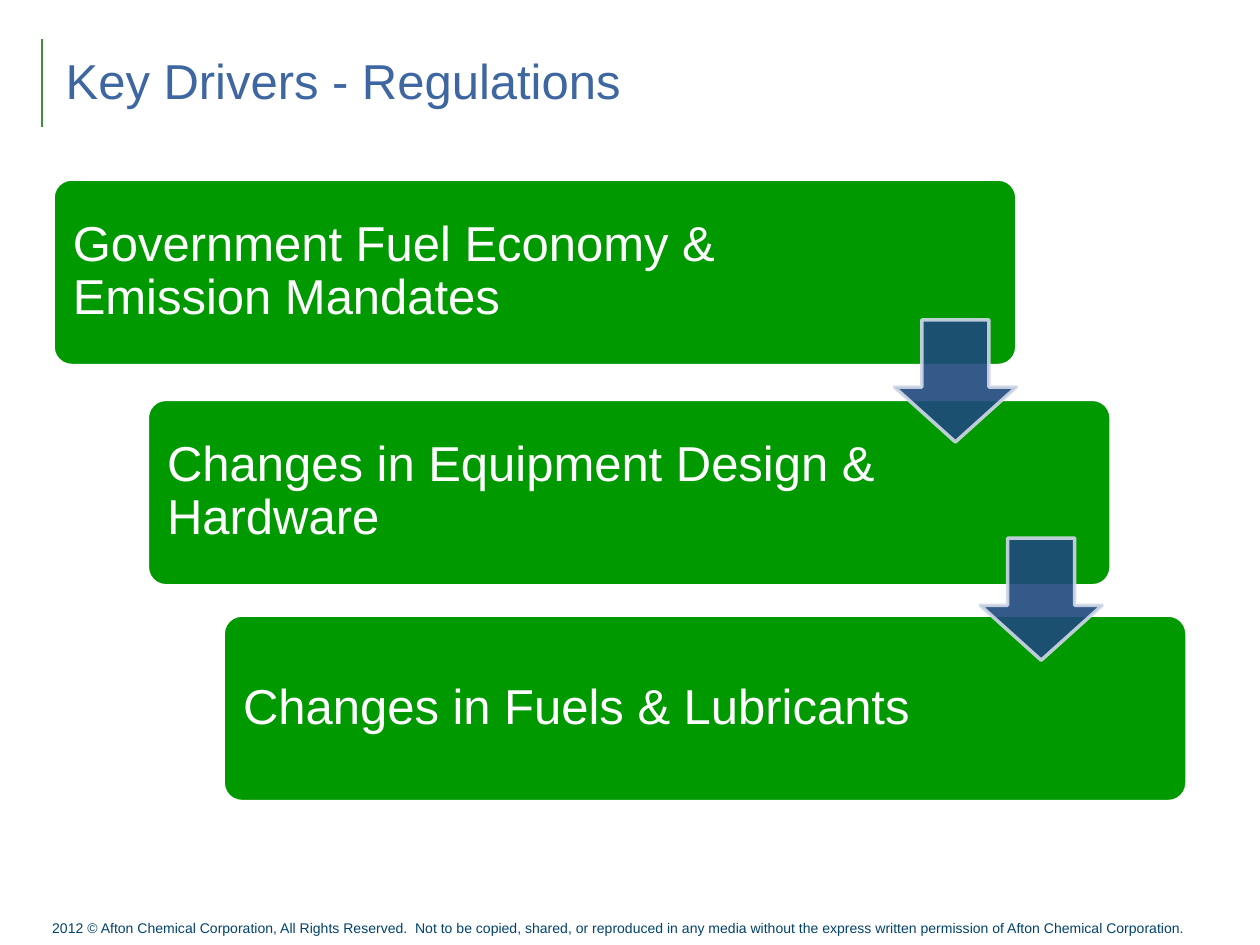
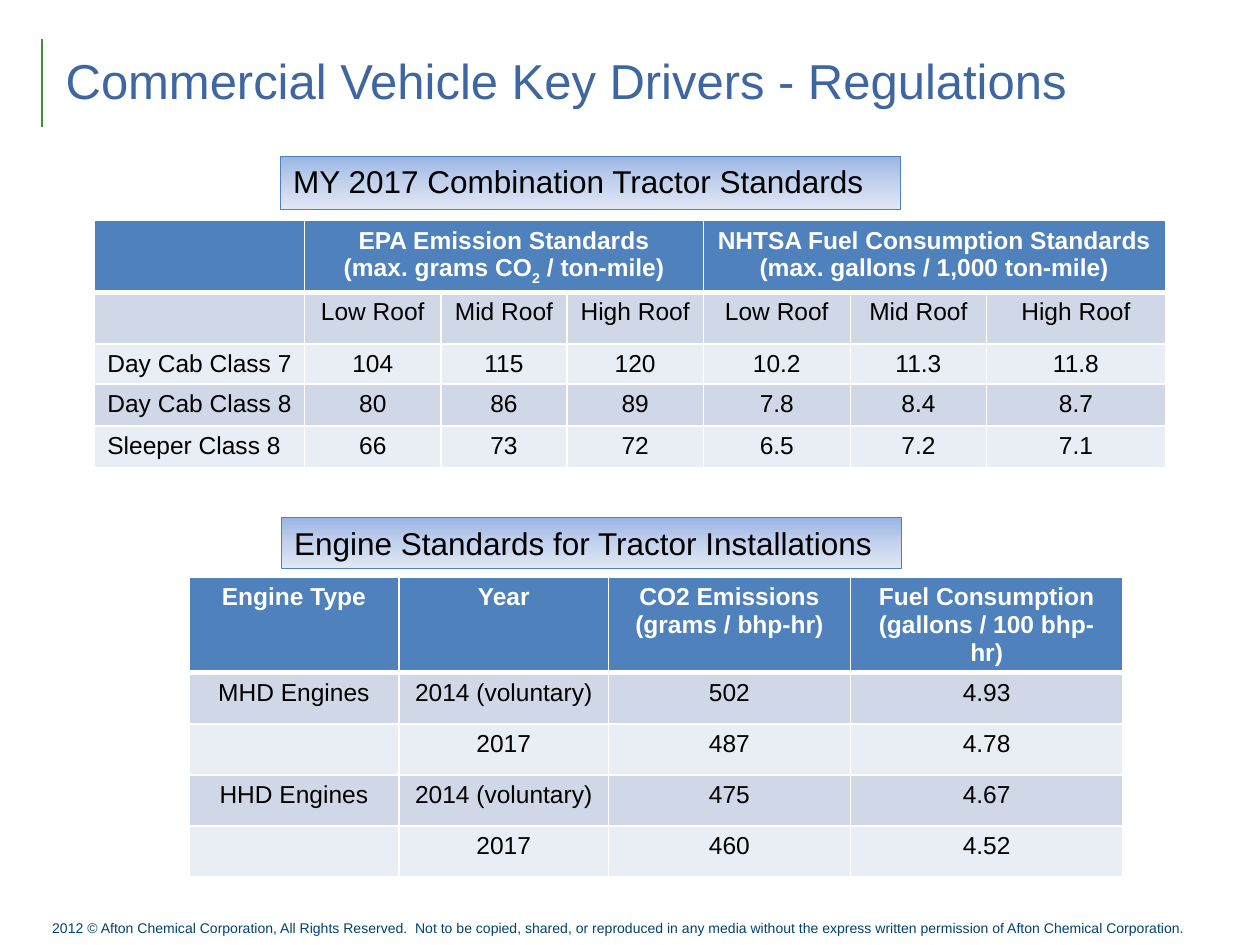
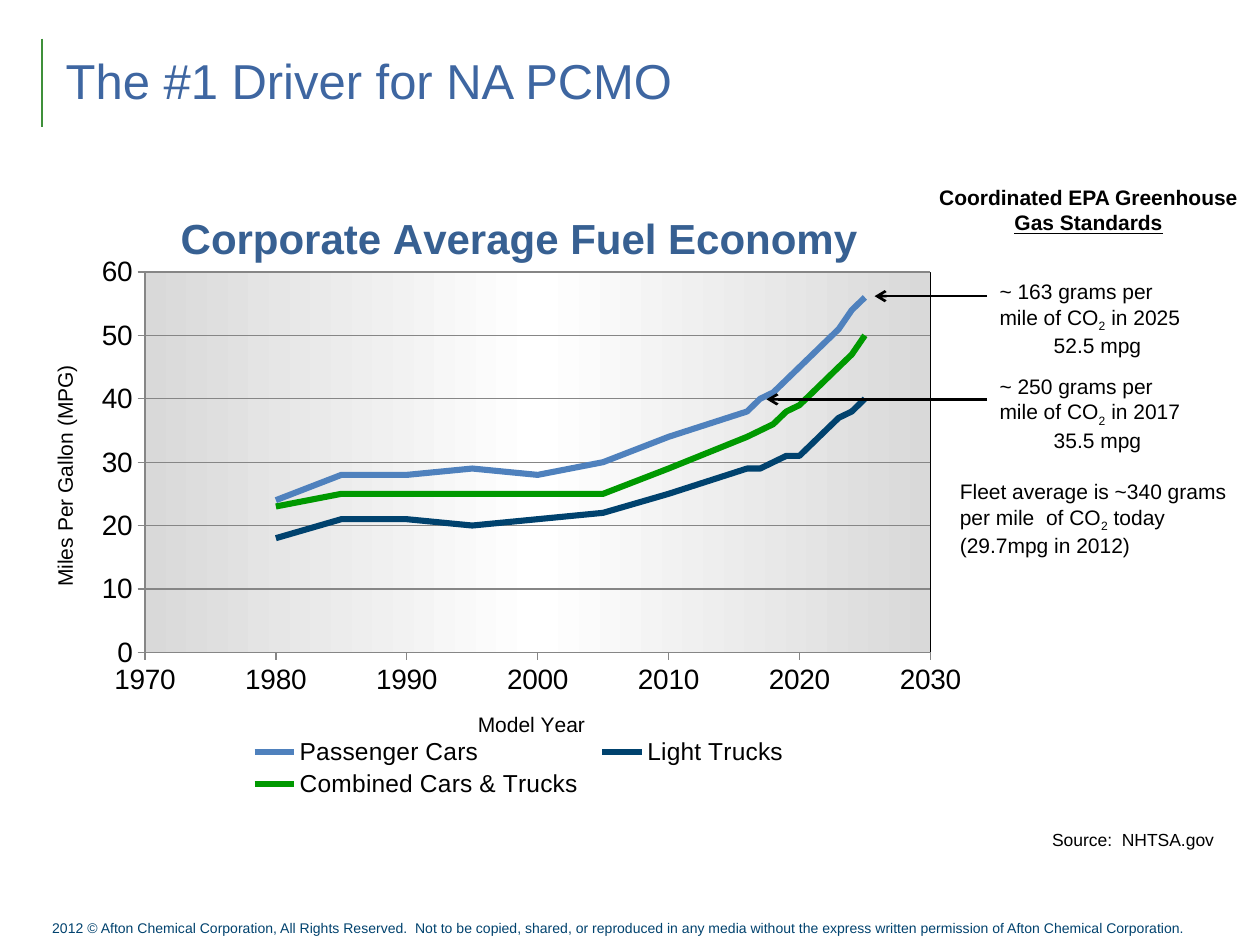
"""Build three slides on the regulations that drive fuel and lubricant changes."""
from dataclasses import dataclass
from typing import NamedTuple

from pptx import Presentation
from pptx.chart.data import XyChartData
from pptx.dml.color import RGBColor
from pptx.enum.chart import XL_CHART_TYPE as ChartType, XL_LEGEND_POSITION as LegendPosition
from pptx.enum.chart import XL_TICK_MARK as TickMark
from pptx.enum.shapes import MSO_CONNECTOR as Connector, MSO_SHAPE as Preset
from pptx.enum.text import MSO_ANCHOR as Anchor, PP_ALIGN as Align
from pptx.oxml import parse_xml
from pptx.oxml.ns import nsdecls, qn
from pptx.util import Cm, Pt

FONT = "Arial"
BLACK = RGBColor(0x00, 0x00, 0x00)
WHITE = RGBColor(0xFF, 0xFF, 0xFF)
TITLE_BLUE = RGBColor(0x3E, 0x66, 0xA1)
RULE_GREEN = RGBColor(0x3F, 0x90, 0x3A)
GREEN = RGBColor(0x00, 0x99, 0x00)
NAVY = RGBColor(0x00, 0x42, 0x6E)
ACCENT = RGBColor(0x4F, 0x81, 0xBD)
ARROW_BLUE = RGBColor(0x1F, 0x49, 0x7D)
CHART_BLUE = RGBColor(0x37, 0x60, 0x92)
BAND_DARK = RGBColor(0xD0, 0xD8, 0xE8)
BAND_LIGHT = RGBColor(0xE9, 0xED, 0xF4)
AXIS_GREY = RGBColor(0x86, 0x86, 0x86)
PLOT_GREY = RGBColor(0xD9, 0xD9, 0xD9)
CAPTION_STOPS = (RGBColor(0x9A, 0xB5, 0xE4), RGBColor(0xC2, 0xD1, 0xED), RGBColor(0xE1, 0xE8, 0xF5))
PLOT_STOPS = (PLOT_GREY, WHITE, PLOT_GREY)

FOOTER = ("2012 © Afton Chemical Corporation, All Rights Reserved.  Not to be copied, shared, or "
          "reproduced in any media without the express written permission of Afton Chemical Corporation.")


class Run(NamedTuple):
    text: str
    subscript: bool = False
    underline: bool = False


class Para(NamedTuple):
    runs: tuple
    align: Align | None = None


class Box(NamedTuple):
    left: float
    top: float
    width: float
    height: float

    def lengths(self) -> tuple:
        return tuple(Cm(value) for value in self)


@dataclass
class Step:
    text: str
    left: float
    top: float
    text_width: float


@dataclass
class Note:
    box: Box
    paragraphs: tuple
    size: int = 12
    bold: bool = False
    align: Align = Align.LEFT


@dataclass
class Standards:
    caption: str
    caption_box: Box
    left: float
    top: float
    columns: tuple
    row_heights: tuple
    rows: tuple
    label_align: Align
    merges: tuple = ()


class Economy(NamedTuple):
    name: str
    color: RGBColor
    mpg: tuple


TWO = Run("2", subscript=True)

STEPS = (
    Step("Government Fuel Economy & Emission Mandates", 1.07, 3.61, 15.37),
    Step("Changes in Equipment Design & Hardware", 2.97, 8.05, 15.04),
    Step("Changes in Fuels & Lubricants", 4.5, 12.4, 15.04),
)
STEP_WIDTH, STEP_HEIGHT, STEP_INSET = 19.43, 3.76, 0.1
ARROW_SIZE = 2.46
ARROW_CORNERS = ((18.03, 6.45), (19.76, 10.85))

ROOFS = ("Low Roof", "Mid Roof", "High Roof")
STANDARDS = (
    Standards(
        "MY 2017 Combination Tractor Standards", Box(5.66, 3.15, 12.5, 1.07), 1.91, 4.45,
        (4.23, 2.75, 2.54, 2.75, 2.96, 2.75, 3.6), (1.04, 1.04, 0.71, 0.84, 0.84),
        (
            ("", (Para(("EPA Emission Standards",)),
                  Para(("(max. grams CO", TWO, " / ton-mile)"))), "", "",
             "NHTSA Fuel Consumption Standards (max. gallons / 1,000 ton-mile)", "", ""),
            ("", *ROOFS, *ROOFS),
            ("Day Cab Class 7", "104", "115", "120", "10.2", "11.3", "11.8"),
            ("Day Cab Class 8", "80", "86", "89", "7.8", "8.4", "8.7"),
            ("Sleeper Class 8", "66", "73", "72", "6.5", "7.2", "7.1"),
        ),
        Align.LEFT, ((1, 3), (4, 6)),
    ),
    Standards(
        "Engine Standards for Tractor Installations", Box(5.68, 10.43, 12.5, 1.03), 3.81, 11.64,
        (4.23, 4.23, 4.87, 5.5), (1.45, 1.03, 1.03, 1.03, 1.03),
        (
            ("Engine Type", "Year", "CO2 Emissions (grams / bhp-hr)",
             "Fuel Consumption (gallons / 100 bhp-hr)"),
            ("MHD Engines", "2014 (voluntary)", "502", "4.93"),
            ("", "2017", "487", "4.78"),
            ("HHD Engines", "2014 (voluntary)", "475", "4.67"),
            ("", "2017", "460", "4.52"),
        ),
        Align.CENTER,
    ),
)

MODEL_YEARS = (*range(1980, 2011, 5), *range(2016, 2026))
ECONOMIES = (
    Economy("Passenger Cars", ACCENT,
            (24, 28, 28, 29, 28, 30, 34, 38, 40, 41, 43, 45, 47, 49, 51, 54, 56)),
    Economy("Light Trucks", NAVY,
            (18, 21, 21, 20, 21, 22, 25, 29, 29, 30, 31, 31, 33, 35, 37, 38, 40)),
    Economy("Combined Cars & Trucks", GREEN,
            (23, 25, 25, 25, 25, 25, 29, 34, 35, 36, 38, 39, 41, 43, 45, 47, 50)),
)


def target(grams: int, year: int, mpg: str, top: float) -> Note:
    """Describe one greenhouse gas target beside the chart."""
    return Note(Box(19.9, top, 4.45, 1.8), (
        Para((f"~ {grams} grams per mile of CO", TWO, f" in {year}")),
        Para((f"{mpg} mpg",), Align.CENTER),
    ))


NOTES = (
    target(250, 2017, "35.5", 7.41),
    target(163, 2025, "52.5", 5.5),
    Note(Box(19.1, 9.53, 6.05, 1.8), (
        Para(("Fleet average is ~340 grams per mile  of CO", TWO, " today (29.7mpg in 2012)")),)),
    Note(Box(18.66, 3.6, 6.57, 1.3), (
        Para(("Coordinated EPA Greenhouse ", Run("Gas Standards", underline=True))),),
        bold=True, align=Align.CENTER),
    Note(Box(20.96, 16.59, 3.81, 0.69), (Para(("Source:  NHTSA.gov",)),), size=10),
)
POINTER_START = 19.9
POINTERS = ((17.63, 5.97), (15.45, 8.05))


def write(frame, content, *, size: int, color: RGBColor = BLACK, bold: bool = False,
          align: Align = Align.LEFT, anchor: Anchor = Anchor.TOP, spacing: float | None = None):
    """Fill a text frame with a string or with paragraphs, in one format."""
    frame.word_wrap = True
    frame.vertical_anchor = anchor
    paragraphs = (Para((content,)),) if isinstance(content, str) else content
    for index, (parts, own_align) in enumerate(paragraphs):
        paragraph = frame.add_paragraph() if index else frame.paragraphs[0]
        paragraph.alignment = align if own_align is None else own_align
        paragraph.line_spacing = spacing
        style(paragraph.font, size, color, bold)
        for part in parts:
            piece = Run(part) if isinstance(part, str) else part
            if not piece.text:
                continue
            run = paragraph.add_run()
            run.text = piece.text
            style(run.font, size, color, bold)
            if piece.underline:
                run.font.underline = True
            if piece.subscript:
                run._r.get_or_add_rPr().set("baseline", "-25000")


def style(font, size: int, color: RGBColor = BLACK, bold: bool = False):
    """Set the typeface, size, colour and weight of a font."""
    font.name, font.size, font.bold = FONT, Pt(size), bold
    font.color.rgb = color


def add_text(slide, box: Box, content, **text_format):
    """Add a text box and return its frame."""
    frame = slide.shapes.add_textbox(*box.lengths()).text_frame
    write(frame, content, **text_format)
    return frame


def add_preset(slide, preset: Preset, box: Box, fill: RGBColor | None, line: RGBColor,
               line_width: float, adjustments: tuple = ()):
    """Add a flat preset shape."""
    shape = slide.shapes.add_shape(preset, *box.lengths())
    shape.shadow.inherit = False
    if fill is None:
        shape.fill.background()
    else:
        shape.fill.solid()
        shape.fill.fore_color.rgb = fill
    shape.line.color.rgb = line
    shape.line.width = Pt(line_width)
    for index, value in enumerate(adjustments):
        shape.adjustments[index] = value
    return shape


def add_line(slide, start: tuple, end: tuple, color: RGBColor, arrow: bool = False):
    """Add a straight line, with an open arrowhead at its end if asked."""
    line = slide.shapes.add_connector(Connector.STRAIGHT, *map(Cm, (*start, *end)))
    line.line.color.rgb = color
    line.line.width = Pt(1.5)
    if arrow:
        line.line._get_or_add_ln().append(parse_xml(f'<a:tailEnd {nsdecls("a")} type="arrow"/>'))
    line._element.spPr.append(parse_xml(f'<a:effectLst {nsdecls("a")}/>'))


def gradient(colors: tuple, angle: int):
    """Return a linear gradient with evenly spaced colours."""
    step = 100000 // (len(colors) - 1)
    stops = "".join(f'<a:gs pos="{index * step}"><a:srgbClr val="{color}"/></a:gs>'
                    for index, color in enumerate(colors))
    return parse_xml(f'<a:gradFill {nsdecls("a")} rotWithShape="1"><a:gsLst>{stops}</a:gsLst>'
                     f'<a:lin ang="{angle * 60000}" scaled="0"/></a:gradFill>')


def start_slide(deck, title: str):
    """Add a slide with the shared title and green rule."""
    slide = deck.slides.add_slide(deck.slide_layouts[5])
    add_line(slide, (0.85, 0.78), (0.85, 2.56), RULE_GREEN)
    heading = slide.shapes.title
    heading.left, heading.top, heading.width, heading.height = Box(1.07, 0.76, 23.1, 1.7).lengths()
    write(heading.text_frame, title, size=28, color=TITLE_BLUE, anchor=Anchor.MIDDLE)
    return slide


def add_footer(slide):
    """Add the shared copyright line."""
    add_text(slide, Box(0, 18.36, 24.97, 0.69), FOOTER, size=8, color=NAVY,
             align=Align.CENTER, anchor=Anchor.MIDDLE)


def add_step(slide, step: Step):
    """Add one rounded step with its text."""
    add_preset(slide, Preset.ROUNDED_RECTANGLE, Box(step.left, step.top, STEP_WIDTH, STEP_HEIGHT),
               GREEN, WHITE, 2, (0.1,))
    text_box = Box(step.left + STEP_INSET, step.top + STEP_INSET, step.text_width,
                   STEP_HEIGHT - 2 * STEP_INSET)
    frame = add_text(slide, text_box, step.text, size=28, color=WHITE, anchor=Anchor.MIDDLE,
                     spacing=0.9)
    frame.margin_left = frame.margin_right = frame.margin_top = frame.margin_bottom = Cm(0.3)


def add_step_arrow(slide, corner: tuple):
    """Add a slightly transparent arrow between two steps."""
    arrow = add_preset(slide, Preset.DOWN_ARROW, Box(*corner, ARROW_SIZE, ARROW_SIZE),
                       ARROW_BLUE, BAND_DARK, 2, (0.55, 0.45))
    for color in arrow._element.spPr.iter(qn("a:srgbClr")):
        color.append(parse_xml(f'<a:alpha {nsdecls("a")} val="90000"/>'))


def add_borders(cell, bottom: int):
    """Give a cell white borders."""
    properties = cell._tc.get_or_add_tcPr()
    for index, (side, width) in enumerate((("L", 1), ("R", 1), ("T", 1), ("B", bottom))):
        properties.insert(index, parse_xml(
            f'<a:ln{side} {nsdecls("a")} w="{Pt(width)}"><a:solidFill>'
            f'<a:srgbClr val="{WHITE}"/></a:solidFill></a:ln{side}>'))


def add_standards(slide, standards: Standards):
    """Add a table of standards and its caption."""
    table = slide.shapes.add_table(
        len(standards.rows), len(standards.columns), Cm(standards.left), Cm(standards.top),
        Cm(sum(standards.columns)), Cm(sum(standards.row_heights))).table
    for column, width in zip(table.columns, standards.columns):
        column.width = Cm(width)
    for row_index, contents in enumerate(standards.rows):
        header = row_index == 0
        table.rows[row_index].height = Cm(standards.row_heights[row_index])
        band = ACCENT if header else (BAND_LIGHT, BAND_DARK)[row_index % 2]
        for column_index, content in enumerate(contents):
            cell = table.cell(row_index, column_index)
            cell.fill.solid()
            cell.fill.fore_color.rgb = band
            add_borders(cell, 3 if header else 1)
            write(cell.text_frame, content, size=14, color=WHITE if header else BLACK, bold=header,
                  align=Align.CENTER if column_index else standards.label_align)
    for first, last in standards.merges:
        table.cell(0, first).merge(table.cell(0, last))

    caption = add_preset(slide, Preset.RECTANGLE, standards.caption_box, None, ACCENT, 0.75)
    properties = caption._element.spPr
    properties.replace(properties.find(qn("a:noFill")), gradient(CAPTION_STOPS, 90))
    write(caption.text_frame, standards.caption, size=18)


def place(element, position: int, x: float, y: float, size: tuple = (), target_area: str = ""):
    """Give a chart part a manual layout in fractions of the chart."""
    old = element.find(qn("c:layout"))
    if old is not None:
        element.remove(old)
    inner = f'<c:layoutTarget val="{target_area}"/>' if target_area else ""
    values = zip("xywh", (x, y, *size))
    extent = "".join(f'<c:{name} val="{value}"/>' for name, value in values)
    element.insert(position, parse_xml(
        f'<c:layout {nsdecls("c")}><c:manualLayout>{inner}<c:xMode val="edge"/>'
        f'<c:yMode val="edge"/>{extent}</c:manualLayout></c:layout>'))


def format_axis(axis, title: str, low: int, high: int, grid: bool):
    """Format a chart axis."""
    axis.minimum_scale, axis.maximum_scale, axis.major_unit = low, high, 10
    axis.major_tick_mark, axis.minor_tick_mark = TickMark.OUTSIDE, TickMark.NONE
    axis.has_major_gridlines = grid
    axis.format.line.color.rgb = AXIS_GREY
    if grid:
        axis.major_gridlines.format.line.color.rgb = AXIS_GREY
    style(axis.tick_labels.font, 16)
    axis.tick_labels.number_format = "General"
    axis.tick_labels.number_format_is_linked = False
    write_chart_title(axis.axis_title, title, 12)


def write_chart_title(title, text: str, size: int, color: RGBColor = BLACK, bold: bool = False):
    """Write a chart or axis title."""
    run = title.text_frame.paragraphs[0].add_run()
    run.text = text
    style(run.font, size, color, bold)


def add_economy_chart(slide):
    """Add the fuel economy chart."""
    data = XyChartData()
    for economy in ECONOMIES:
        points = data.add_series(economy.name)
        for year, mpg in zip(MODEL_YEARS, economy.mpg):
            points.add_data_point(year, mpg)
    chart = slide.shapes.add_chart(ChartType.XY_SCATTER_LINES_NO_MARKERS,
                                   *Box(0.85, 3.6, 18.85, 12.57).lengths(), data).chart
    style(chart.font, 18)
    chart.has_title = True
    write_chart_title(chart.chart_title, "Corporate Average Fuel Economy", 24, CHART_BLUE, True)
    title = chart.chart_title._element
    place(title, 1, 0.14, 0.04)
    overlay = title.find(qn("c:overlay"))
    if overlay is not None:
        overlay.set("val", "1")

    format_axis(chart.category_axis, "Model Year", 1970, 2030, False)
    format_axis(chart.value_axis, "Miles Per Gallon (MPG)", 0, 60, True)
    chart.has_legend = True
    chart.legend.position = LegendPosition.BOTTOM
    chart.legend.include_in_layout = False
    style(chart.legend.font, 14)
    place(chart.legend._element, 1, 0.21, 0.89, (0.6, 0.11))

    plot = chart.plots[0]
    plot.vary_by_categories = False
    for series, economy in zip(plot.series, ECONOMIES):
        series.smooth = False
        series.format.line.color.rgb = economy.color
        series.format.line.width = Pt(3.5)

    plot_area = chart._chartSpace.chart.plotArea
    place(plot_area, 0, 0.11, 0.15, (0.84, 0.61), "inner")
    frame = parse_xml(f'<c:spPr {nsdecls("c", "a")}><a:ln w="{Pt(0.5)}"><a:solidFill>'
                      f'<a:srgbClr val="{BLACK}"/></a:solidFill></a:ln></c:spPr>')
    frame.insert(0, gradient(PLOT_STOPS, 0))
    plot_area.append(frame)


def main():
    """Build and save the deck."""
    deck = Presentation()
    deck.slide_width, deck.slide_height = Cm(25.4), Cm(19.05)

    drivers = start_slide(deck, "Key Drivers - Regulations")
    for step in STEPS:
        add_step(drivers, step)
    for corner in ARROW_CORNERS:
        add_step_arrow(drivers, corner)
    add_footer(drivers)

    vehicles = start_slide(deck, "Commercial Vehicle Key Drivers - Regulations")
    for standards in STANDARDS:
        add_standards(vehicles, standards)
    add_footer(vehicles)

    fuel_economy = start_slide(deck, "The #1 Driver for NA PCMO")
    add_economy_chart(fuel_economy)
    for note in NOTES:
        add_text(fuel_economy, note.box, note.paragraphs, size=note.size, bold=note.bold,
                 align=note.align)
    for tip, level in POINTERS:
        add_line(fuel_economy, (POINTER_START, level), (tip, level), BLACK, arrow=True)
    add_footer(fuel_economy)

    deck.save("out.pptx")


if __name__ == "__main__":
    main()
